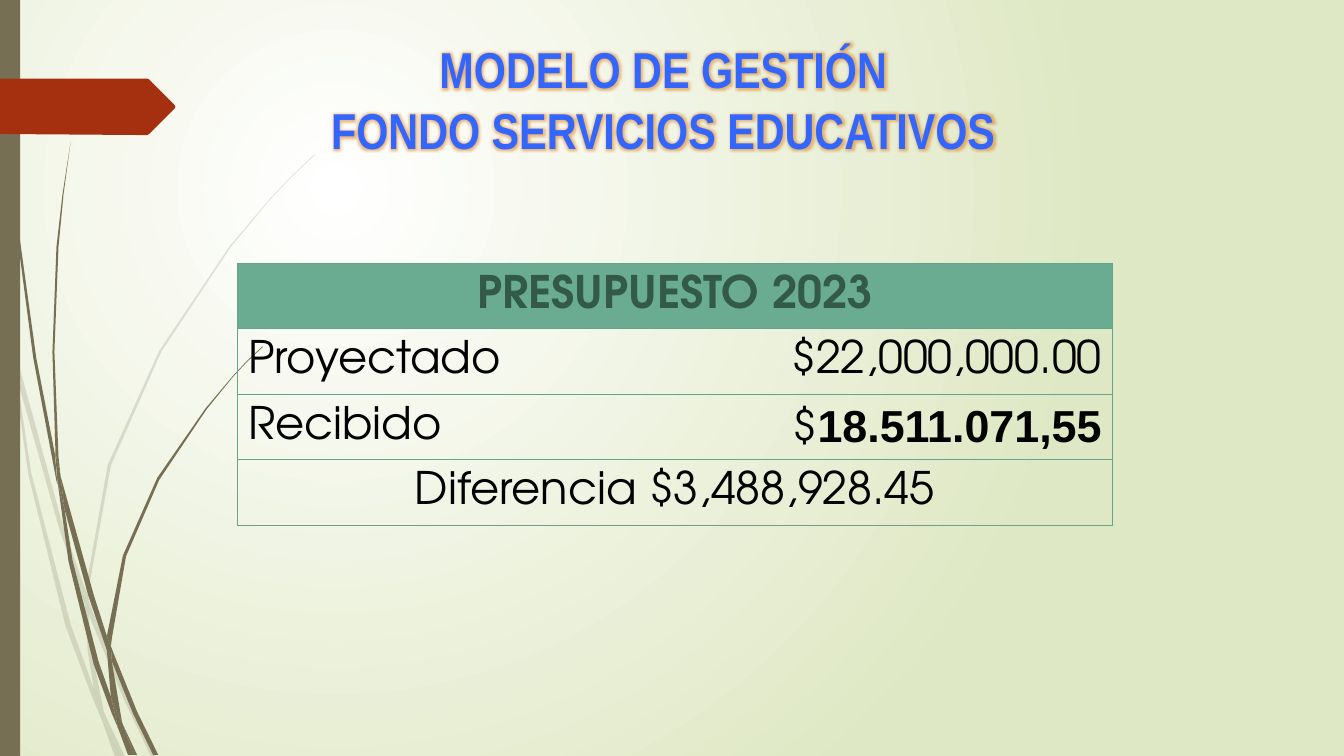
"""Build the budget slide of the educational services fund."""
from dataclasses import dataclass

from lxml.etree import SubElement
from pptx import Presentation
from pptx.dml.color import RGBColor as Rgb
from pptx.enum.shapes import MSO_SHAPE as Preset
from pptx.enum.text import MSO_ANCHOR as Anchor, MSO_AUTO_SIZE as Fit, PP_ALIGN as Align
from pptx.oxml import parse_xml
from pptx.oxml.ns import nsdecls, qn
from pptx.util import Pt

PX = 9144


@dataclass(frozen=True)
class Theme:
    """Colours, fonts and type sizes of the slide."""

    center: str = "FFFFFF"
    edge: str = "DFE8C4"
    olive: str = "766F54"
    rust: str = "A53010"
    title: str = "3366FF"
    glow: str = "DE7E18"
    header: str = "6AAC91"
    header_text: str = "325949"
    border: str = "65A48B"
    text: str = "000000"
    title_font: str = "Arial Narrow"
    table_font: str = "TeX Gyre Adventor"
    amount_font: str = "Arial"
    title_size: int = 36
    table_size: int = 32
    border_width: float = 0.75
    pale_alpha: int = 20
    glow_alpha: int = 55
    glow_radius: int = 5


THEME = Theme()

PALE_BLADES = (
    ((11, 350), (9, 322), (0, 282), (0, 299), (10, 344)),
    ((58, 522), (84, 599), (85, 586), (62, 520), (14, 345), (17, 376)),
    ((92, 607), (88, 596), (88, 610), (123, 694), (150, 751), (155, 751), (127, 692)),
    ((119, 751), (124, 751), (105, 711)),
    ((93, 683), (70, 619), (31, 469), (17, 376), (11, 350), (28, 470), (65, 621), (92, 693),
     (101, 714), (99, 707)),
    ((84, 599), (87, 646), (93, 683), (96, 692), (105, 711), (103, 706), (91, 646), (88, 610),
     (88, 608)),
    ((88, 584), (110, 462), (160, 349), (229, 245), (268, 198), (290, 175), (312, 154),
     (312, 153), (289, 175), (268, 197), (228, 244), (158, 348), (107, 461), (85, 584),
     (85, 586), (88, 596)),
    ((101, 714), (114, 751), (119, 751)),
    ((88, 608), (88, 610), (88, 596), (85, 586), (84, 599)),
    ((96, 692), (93, 683), (99, 707), (101, 714), (119, 751), (105, 711)),
)
DARK_BLADES = (
    ((7, 110), (17, 233), (33, 355), (56, 477), (57, 481), (55, 457), (55, 453), (36, 355),
     (19, 232), (8, 109), (5, 48), (4, 0), (3, 0), (4, 48)),
    ((88, 592), (106, 645), (106, 631), (93, 590), (60, 472), (64, 505)),
    ((113, 649), (110, 641), (111, 656), (132, 708), (152, 749), (157, 749), (136, 706)),
    ((110, 691), (98, 657), (72, 556), (64, 505), (57, 477), (68, 557), (93, 659), (111, 708),
     (117, 722), (116, 717)),
    ((60, 472), (58, 453), (54, 349), (58, 245), (63, 193), (70, 141), (62, 193), (56, 245),
     (52, 349), (55, 449)),
    ((133, 749), (136, 749), (122, 719)),
    ((57, 477), (64, 505), (60, 472), (55, 449), (55, 453)),
    ((111, 633), (125, 552), (158, 476), (205, 406), (231, 374), (245, 359), (261, 344),
     (260, 344), (245, 358), (231, 373), (204, 405), (156, 474), (122, 551), (106, 631),
     (110, 641)),
    ((117, 722), (127, 749), (131, 749)),
    ((106, 645), (110, 691), (116, 706), (122, 719), (121, 716), (111, 656), (109, 651)),
    ((106, 645), (109, 651), (111, 656), (110, 641), (106, 631)),
    ((116, 706), (110, 691), (116, 717), (117, 722), (130, 749), (133, 749), (122, 719)),
)
ARROW = ((173, 108), (148, 133), (146, 134), (136, 134), (0, 133), (0, 78), (146, 78),
         (148, 79), (173, 104), (174, 106))


def assign(target, **values):
    """Set each named value on the target."""
    for name, value in values.items():
        setattr(target, name, value)


def place(left, top, width, height):
    """Return a frame in px as a dict of EMU lengths."""
    return {"left": left * PX, "top": top * PX, "width": width * PX, "height": height * PX}


def style_span(span, font, size, color, bold=False):
    """Format one run of text."""
    assign(span.font, name=font, size=Pt(size), bold=bold)
    span.font.color.rgb = Rgb.from_string(color)


def paint(shape, color, alpha=100):
    """Give a shape a flat fill without line or shadow."""
    shape.shadow.inherit = False
    shape.line.fill.background()
    shape.fill.solid()
    shape.fill.fore_color.rgb = Rgb.from_string(color)
    if alpha < 100:
        tint = shape.element.spPr.find(f".//{qn('a:srgbClr')}")
        SubElement(tint, qn("a:alpha"), val=str(alpha * 1000))


def paint_background(page):
    """Fill the page with a radial gradient."""
    fill = page.background.fill
    fill.gradient()
    for stop, color in zip(fill.gradient_stops, (THEME.center, THEME.edge)):
        stop.color.rgb = Rgb.from_string(color)
    linear = page.element.find(f".//{qn('a:lin')}")
    linear.getparent().replace(linear, parse_xml(
        f'<a:path {nsdecls("a")} path="circle">'
        '<a:fillToRect l="50000" t="50000" r="100000" b="100000"/></a:path>'))


def add_outline(page, points, color, alpha=100):
    """Draw a filled outline through points in px."""
    builder = page.shapes.build_freeform(*points[0], scale=PX)
    builder.add_line_segments(points[1:], close=True)
    paint(builder.convert_to_shape(), color, alpha)


def fill_title(page, text, frame):
    """Place the title and give it a soft glow."""
    title = page.shapes.title
    assign(title, **place(*frame))
    title.element.getparent().append(title.element)
    box = title.text_frame
    box.text = text
    assign(box, word_wrap=True, auto_size=Fit.NONE, vertical_anchor=Anchor.TOP)
    para = box.paragraphs[0]
    para.alignment = Align.CENTER
    for span in para.runs:
        style_span(span, THEME.title_font, THEME.title_size, THEME.title, True)
        fill = span.font._element.find(qn("a:solidFill"))
        fill.addnext(parse_xml(
            f'<a:effectLst {nsdecls("a")}><a:glow rad="{Pt(THEME.glow_radius)}">'
            f'<a:srgbClr val="{THEME.glow}"><a:alpha val="{THEME.glow_alpha * 1000}"/>'
            '</a:srgbClr></a:glow></a:effectLst>'))


def draw_borders(cell, hidden):
    """Draw the borders of a cell except the hidden side."""
    solid = f'<a:solidFill><a:srgbClr val="{THEME.border}"/></a:solidFill>'
    for index, side in enumerate("LRTB"):
        ink = "<a:noFill/>" if side == hidden else solid
        cell._tc.get_or_add_tcPr().insert(index, parse_xml(
            f'<a:ln{side} {nsdecls("a")} w="{Pt(THEME.border_width)}">{ink}</a:ln{side}>'))


def fill_cell(cell, align, spans, hidden="", header=False):
    """Write a table cell with its fill and borders."""
    cell.vertical_anchor = Anchor.MIDDLE
    if header:
        cell.fill.solid()
        cell.fill.fore_color.rgb = Rgb.from_string(THEME.header)
    else:
        cell.fill.background()
    draw_borders(cell, hidden)
    para = cell.text_frame.paragraphs[0]
    para.alignment = align
    color = THEME.header_text if header else THEME.text
    for text, font, bold in spans:
        span = para.add_run()
        span.text = text
        style_span(span, font, THEME.table_size, color, bold)


def add_budget(page, rows, left, top, widths, row_height):
    """Add the budget table; a row with one entry spans both columns."""
    frame = place(left, top, sum(widths), row_height * len(rows))
    table = page.shapes.add_table(len(rows), len(widths), **frame).table
    assign(table, first_row=False, horz_banding=False)
    for column, width in zip(table.columns, widths):
        column.width = width * PX
    for number, entries in enumerate(rows):
        table.rows[number].height = row_height * PX
        cells = [table.cell(number, column) for column in range(len(widths))]
        if len(entries) == 1:
            cells[0].merge(cells[1])
            fill_cell(cells[0], Align.CENTER, entries[0], header=number == 0)
        else:
            for cell, align, spans, hidden in zip(cells, (Align.LEFT, Align.RIGHT), entries, "RL"):
                fill_cell(cell, align, spans, hidden)


def main():
    """Build the deck and save it."""
    deck = Presentation()
    assign(deck, slide_width=1333 * PX, slide_height=750 * PX)
    page = deck.slides.add_slide(deck.slide_layouts[5])
    paint_background(page)
    for blades, alpha in ((PALE_BLADES, THEME.pale_alpha), (DARK_BLADES, 100)):
        for points in blades:
            add_outline(page, points, THEME.olive, alpha)
    bar = page.shapes.add_shape(Preset.RECTANGLE, **place(0, 0, 20, 750))
    paint(bar, THEME.olive)
    add_outline(page, ARROW, THEME.rust)
    fill_title(page, "MODELO DE GESTIÓN\vFONDO SERVICIOS EDUCATIVOS", (108, 33, 1100, 159))
    font = THEME.table_font
    rows = (
        ([("PRESUPUESTO 2023", font, True)],),
        ([("Proyectado", font, False)], [("$22,000,000.00", font, False)]),
        ([("Recibido", font, False)],
         [("$", font, False), ("18.511.071,55", THEME.amount_font, True)]),
        ([("Diferencia $3,488,928.45", font, False)],),
    )
    add_budget(page, rows, 236, 261, (378, 489), 65)
    deck.save("out.pptx")


if __name__ == "__main__":
    main()
